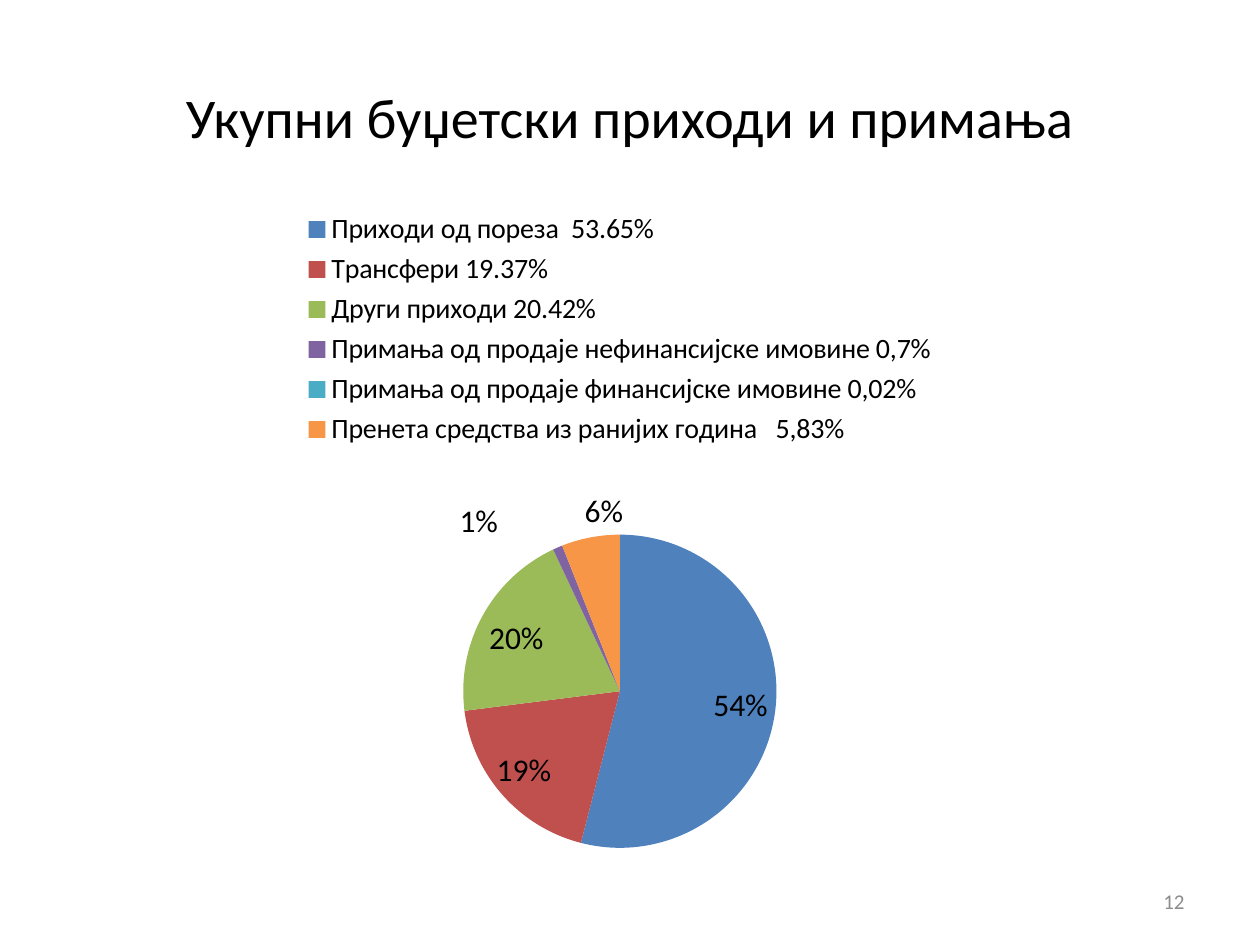
import pptx
import pptx.chart.data
import pptx.dml.color
import pptx.enum.chart
import pptx.enum.text
import pptx.oxml
import pptx.oxml.ns
import pptx.util
from pptx.dml.color import RGBColor
from pptx.enum.chart import XL_LABEL_POSITION
from pptx.util import Inches

FONT = "Calibri"
BLACK = RGBColor(0x00, 0x00, 0x00)
GRAY = RGBColor(0x8C, 0x8C, 0x8C)
BLUE = RGBColor(0x4F, 0x81, 0xBD)
RED = RGBColor(0xC0, 0x50, 0x4D)
GREEN = RGBColor(0x9B, 0xBB, 0x59)
PURPLE = RGBColor(0x80, 0x64, 0xA2)
TEAL = RGBColor(0x4B, 0xAC, 0xC6)
ORANGE = RGBColor(0xF7, 0x96, 0x46)

REVENUES = [
    ("Приходи од пореза  53.65%", 54, BLUE),
    ("Трансфери 19.37%", 19, RED),
    ("Други приходи 20.42%", 20, GREEN),
    ("Примања од продаје нефинансијске имовине 0,7%", 1, PURPLE),
    ("Примања од продаје финансијске имовине 0,02%", 0, TEAL),
    ("Пренета средства из ранијих година   5,83%", 6, ORANGE),
]
INSIDE, OUTSIDE = XL_LABEL_POSITION.INSIDE_END, XL_LABEL_POSITION.OUTSIDE_END
# Label positions that differ, with shifts as fractions of the chart size
LABEL_SHIFTS = {
    0: (INSIDE, 0, 0.02),
    1: (INSIDE, -0.01, 0),
    3: (OUTSIDE, -0.05, 0),
    4: (OUTSIDE, 0, 0),
    5: (OUTSIDE, 0.03, 0),
}


def set_font(font, size, color=BLACK):
    font.name = FONT
    font.size = pptx.util.Pt(size)
    font.color.rgb = color


def add_text(slide, box, text, size, color, align):
    tf = slide.shapes.add_textbox(*box).text_frame
    tf.word_wrap = True
    tf.vertical_anchor = pptx.enum.text.MSO_ANCHOR.MIDDLE
    p = tf.paragraphs[0]
    p.alignment = align
    r = p.add_run()
    r.text = text
    set_font(r.font, size, color)


def chart_xml(tag, content="", attributes=""):
    """Return an element of the chart namespace."""
    return pptx.oxml.parse_xml(
        f'<c:{tag} {pptx.oxml.ns.nsdecls("c")} {attributes}>{content}</c:{tag}>'
    )


def layout_xml(**values):
    """Return a manual chart layout with the given settings in order."""
    items = "".join(f'<c:{name} val="{value}"/>' for name, value in values.items())
    return chart_xml("layout", f"<c:manualLayout>{items}</c:manualLayout>")


def format_labels(series):
    labels = series.data_labels
    labels.show_percentage = True
    labels.show_value = False
    labels.number_format = "0%"
    labels.number_format_is_linked = False
    labels.position = INSIDE
    set_font(labels.font, 18)
    for i, (position, x, y) in LABEL_SHIFTS.items():
        label = series.points[i].data_label
        set_font(label.font, 18)
        label.position = position
        dLbl = series._element.xpath(f"c:dLbls/c:dLbl[c:idx/@val='{i}']")[0]
        dLbl.xpath("c:showVal")[0].set("val", "0")
        dLbl.xpath("c:showPercent")[0].set("val", "1")
        idx = dLbl.xpath("c:idx")[0]
        idx.addnext(chart_xml("numFmt", attributes='formatCode="0%" sourceLinked="0"'))
        idx.addnext(layout_xml(x=x, y=y))
    dLbls = series._element.xpath("c:dLbls")[0]
    for old in dLbls.xpath("c:showLeaderLines"):
        dLbls.remove(old)
    dLbls.append(chart_xml("showLeaderLines", attributes='val="0"'))


def add_revenue_pie(slide, box):
    data = pptx.chart.data.CategoryChartData()
    data.categories = [name for name, _, _ in REVENUES]
    data.add_series("Series 1", [value for _, value, _ in REVENUES])
    chart = slide.shapes.add_chart(
        pptx.enum.chart.XL_CHART_TYPE.PIE, *box, data
    ).chart
    chart.has_title = False
    set_font(chart.font, 18)

    chart.has_legend = True
    legend = chart.legend
    legend.position = pptx.enum.chart.XL_LEGEND_POSITION.TOP
    legend.include_in_layout = False
    set_font(legend.font, 16)
    for old in legend._element.xpath("c:layout"):
        legend._element.remove(old)
    legend._element.xpath("c:legendPos")[0].addnext(
        layout_xml(xMode="edge", yMode="edge", x=0.22, y=0.01, w=0.56, h=0.33)
    )

    plot = chart.plots[0]
    plot.vary_by_categories = True
    plot_area = plot._element.getparent()
    for old in plot_area.xpath("c:layout"):
        plot_area.remove(old)
    plot_area.insert(0, layout_xml(
        layoutTarget="inner", xMode="edge", yMode="edge",
        x=0.01, y=0.45, w=0.98, h=0.42,
    ))
    series = plot.series[0]
    for i, (_, _, color) in enumerate(REVENUES):
        fill = series.points[i].format.fill
        fill.solid()
        fill.fore_color.rgb = color
    format_labels(series)


def main():
    prs = pptx.Presentation()
    prs.slide_width, prs.slide_height = Inches(10), Inches(7.5)
    slide = prs.slides.add_slide(prs.slide_layouts[6])
    align = pptx.enum.text.PP_ALIGN
    title_box = [Inches(v) for v in (0.5, 0.3, 9, 1.25)]
    chart_box = [Inches(v) for v in (0.42, 1.58, 9, 5.92)]
    number_box = [Inches(v) for v in (7.17, 6.95, 2.33, 0.4)]
    add_text(slide, title_box, "Укупни буџетски приходи и примања", 32, BLACK, align.CENTER)
    add_revenue_pie(slide, chart_box)
    add_text(slide, number_box, "12", 12, GRAY, align.RIGHT)
    prs.save("out.pptx")


if __name__ == "__main__":
    main()
